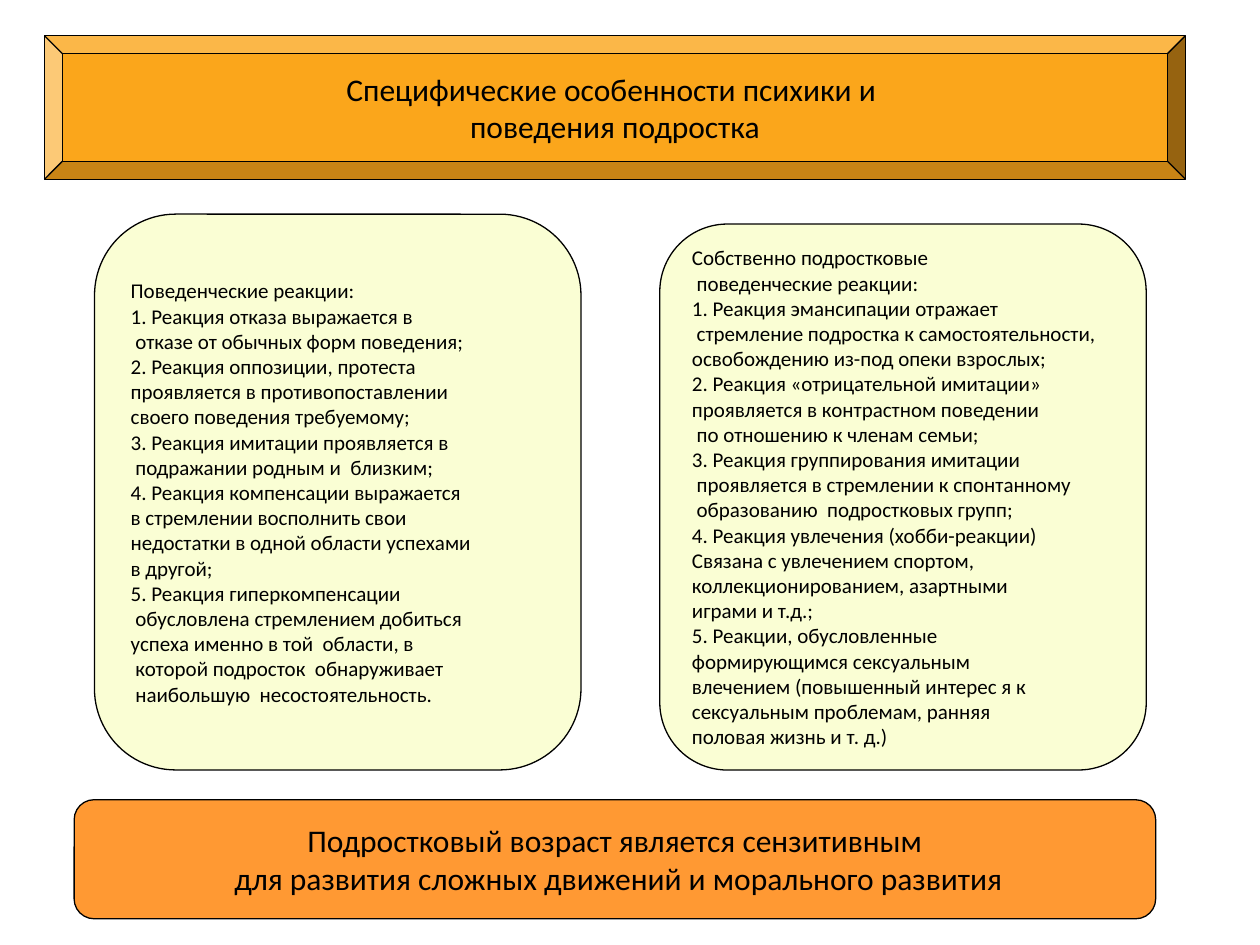
import pptx
import pptx.dml.color
import pptx.enum.shapes
import pptx.enum.text
import pptx.util

Pt = pptx.util.Pt
RGBColor = pptx.dml.color.RGBColor
SHAPE = pptx.enum.shapes.MSO_SHAPE
ALIGN = pptx.enum.text.PP_ALIGN

BLACK = RGBColor(0x00, 0x00, 0x00)
AMBER = RGBColor(0xFB, 0xA6, 0x1B)
ORANGE = RGBColor(0xFF, 0x99, 0x33)
CREAM = RGBColor(0xFA, 0xFE, 0xD4)

HANGING = Pt(36)
PANEL_WIDTH = 278

TITLE = ["Специфические особенности психики и ", "поведения подростка"]

CONCLUSION = [
    "Подростковый возраст является сензитивным",
    " для развития сложных движений и морального развития",
]

BEHAVIOUR = [
    "Поведенческие реакции:",
    "1. Реакция отказа выражается в",
    " отказе от обычных форм поведения;",
    "2. Реакция оппозиции, протеста",
    "проявляется в противопоставлении",
    "своего поведения требуемому;",
    "3. Реакция имитации проявляется в",
    " подражании родным и  близким;",
    "4. Реакция компенсации выражается",
    "в стремлении восполнить свои",
    "недостатки в одной области успехами",
    "в другой;",
    "5. Реакция гиперкомпенсации",
    " обусловлена стремлением добиться",
    "успеха именно в той  области, в",
    " которой подросток  обнаруживает",
    " наибольшую  несостоятельность.",
]

ADOLESCENT = [
    "Собственно подростковые",
    " поведенческие реакции:",
    "1. Реакция эмансипации отражает",
    " стремление подростка к самостоятельности,",
    "освобождению из-под опеки взрослых;",
    "2. Реакция «отрицательной имитации»",
    "проявляется в контрастном поведении",
    " по отношению к членам семьи;",
    "3. Реакция группирования имитации",
    " проявляется в стремлении к спонтанному",
    " образованию  подростковых групп;",
    "4. Реакция увлечения (хобби-реакции)",
    "Связана с увлечением спортом,",
    "коллекционированием, азартными",
    "играми и т.д.;",
    "5. Реакции, обусловленные",
    "формирующимся сексуальным",
    "влечением (повышенный интерес я к",
    "сексуальным проблемам, ранняя",
    "половая жизнь и т. д.)",
]


def apply_format(target, values):
    for name, value in values.items():
        setattr(target, name, value)


def add_box(slide, kind, bounds, corner, color):
    box = slide.shapes.add_shape(kind, *(Pt(length) for length in bounds))
    box.adjustments[0] = corner
    box.shadow.inherit = False
    box.fill.solid()
    box.fill.fore_color.rgb = color
    box.line.color.rgb = BLACK
    box.line.width = Pt(0.75)
    apply_format(box.text_frame, {
        "word_wrap": False,
        "vertical_anchor": pptx.enum.text.MSO_ANCHOR.MIDDLE,
    })
    return box


def write_lines(box, lines, size, align):
    frame = box.text_frame
    for number, line in enumerate(lines):
        paragraph = frame.add_paragraph() if number else frame.paragraphs[0]
        paragraph.alignment = align
        run = paragraph.add_run()
        run.text = line
        apply_format(run.font, {"name": "Calibri", "size": Pt(size)})
        run.font.color.rgb = BLACK


def add_banner(slide, kind, bounds, corner, color, lines):
    banner = add_box(slide, kind, bounds, corner, color)
    write_lines(banner, lines, 18, ALIGN.CENTER)


def add_panel(slide, left, top, height, corner, lines):
    bounds = (left, top, PANEL_WIDTH, height)
    panel = add_box(slide, SHAPE.ROUNDED_RECTANGLE, bounds, corner, CREAM)
    write_lines(panel, lines, 12, ALIGN.LEFT)
    for paragraph in panel.text_frame.paragraphs:
        properties = paragraph._p.get_or_add_pPr()
        properties.set("marL", str(HANGING))
        properties.set("indent", str(-HANGING))


def main():
    presentation = pptx.Presentation()
    apply_format(presentation, {"slide_width": Pt(720), "slide_height": Pt(540)})
    slide = presentation.slides.add_slide(presentation.slide_layouts[6])

    # Title and conclusion
    add_banner(slide, SHAPE.BEVEL, (25.4, 20.4, 652, 82), 0.125, AMBER, TITLE)
    add_banner(slide, SHAPE.ROUNDED_RECTANGLE, (42.4, 457, 618, 68), 0.167,
               ORANGE, CONCLUSION)

    # Two lists of reactions
    add_panel(slide, 54, 122.4, 317.6, 0.167, BEHAVIOUR)
    add_panel(slide, 377, 128, 312, 0.139, ADOLESCENT)

    presentation.save("out.pptx")


if __name__ == "__main__":
    main()
